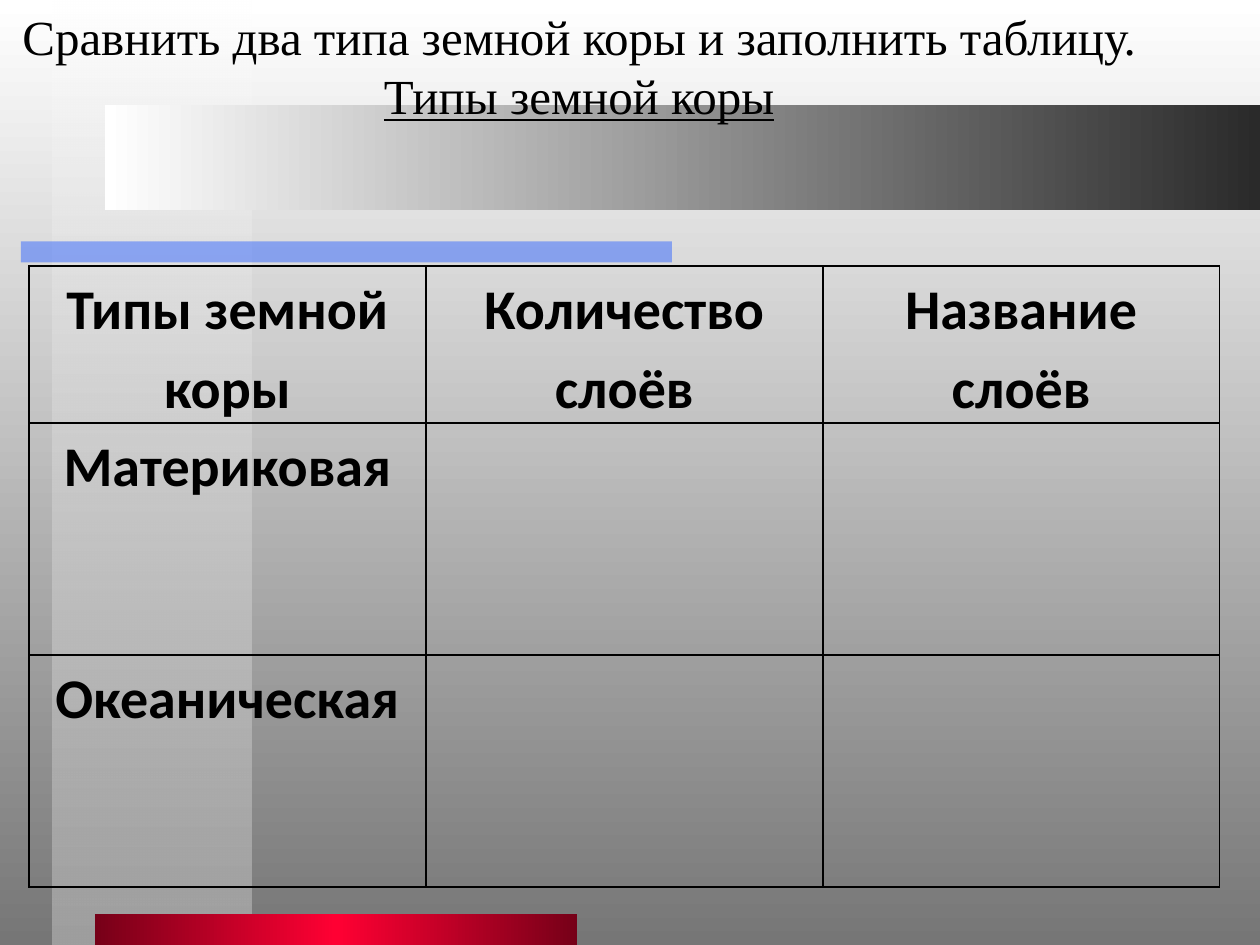
"""Build a slide with an empty comparison table of the two types of Earth's crust."""
from lxml.etree import SubElement
from pptx import Presentation
from pptx.dml.color import RGBColor
from pptx.enum.shapes import MSO_SHAPE
from pptx.enum.text import MSO_ANCHOR, MSO_AUTO_SIZE, PP_ALIGN
from pptx.oxml import parse_xml
from pptx.oxml.ns import nsdecls, qn
from pptx.util import Inches, Pt

COLORS = {
    "white": "FFFFFF", "gray": "767676", "silver": "9F9F9F", "charcoal": "2A2A2A",
    "blue": "3366FF", "red": "FF0033", "maroon": "760018", "ink": "000000",
}


def paint(fill, owner, stops, angle=0):
    fill.gradient()
    fill.gradient_angle = -angle % 360
    stop_list = owner.find(".//" + qn("a:gsLst"))
    for old_stop in list(stop_list):
        stop_list.remove(old_stop)
    for position, color, opacity in stops:
        stop = SubElement(stop_list, qn("a:gs"), pos=str(position * 1000))
        tint = SubElement(stop, qn("a:srgbClr"), val=COLORS[color])
        if opacity < 100:
            SubElement(tint, qn("a:alpha"), val=str(opacity * 1000))


def write(paragraph, text, *, font, size, bold=False, underline=False, spacing=None):
    paragraph.alignment = PP_ALIGN.CENTER
    paragraph.line_spacing = spacing
    run = paragraph.add_run()
    run.text = text
    run.font.name = font
    run.font.size = Pt(size)
    run.font.bold = bold
    run.font.underline = underline
    run.font.color.rgb = RGBColor.from_string(COLORS["ink"])


deck = Presentation()
deck.slide_width, deck.slide_height = Inches(10), Inches(7.5)
column, row = deck.slide_width / 24, deck.slide_height / 18
slide = deck.slides.add_slide(deck.slide_layouts[6])

backdrop = slide.background.fill
backdrop.gradient()
paint(backdrop, slide.element, [(0, "white", 100), (100, "gray", 100)], 90)

bands = [
    ((1, 0, 3.8, 18), [(0, "white", 50), (100, "silver", 100)], 90),
    ((0.4, 4.6, 12.4, 0.4), [(0, "blue", 50)], 0),
    ((1.8, 17.4, 9.2, 0.6), [(0, "maroon", 100), (50, "red", 100), (100, "maroon", 100)], 0),
    ((2, 2, 22, 2), [(0, "white", 100), (100, "charcoal", 100)], 0),
]
for (left, top, width, height), stops, angle in bands:
    band = slide.shapes.add_shape(
        MSO_SHAPE.RECTANGLE, int(left * column), int(top * row), int(width * column), int(height * row))
    band.shadow.inherit = False
    band.line.fill.background()
    if len(stops) > 1:
        paint(band.fill, band.element.spPr, stops, angle)
    else:
        _, color, opacity = stops[0]
        band.fill.solid()
        band.fill.fore_color.rgb = RGBColor.from_string(COLORS[color])
        tint = band.element.spPr.find(".//" + qn("a:srgbClr"))
        SubElement(tint, qn("a:alpha"), val=str(opacity * 1000))

crust_rows = [
    ["Типы земной коры", "Количество слоёв", "Название слоёв"],
    ["Материковая", "", ""],
    ["Океаническая", "", ""],
]
comparison = slide.shapes.add_table(
    3, 3, Inches(0.23), Inches(2.11), Inches(9.45), Inches(4.91)).table
comparison.first_row = comparison.horz_banding = False
for crust_column in comparison.columns:
    crust_column.width = Inches(3.15)
for crust_row, height in zip(comparison.rows, (1.23, 1.84, 1.84)):
    crust_row.height = Inches(height)

for crust_row, labels in zip(comparison.rows, crust_rows):
    for cell, label in zip(crust_row.cells, labels):
        cell.fill.background()
        cell.margin_left = cell.margin_right = Inches(0.07)
        cell.margin_top = cell.margin_bottom = 0
        if label:
            write(cell.text_frame.paragraphs[0], label,
                  font="Calibri", size=32, bold=True, spacing=1.15)
        for index, side in enumerate(("lnL", "lnR", "lnT", "lnB")):
            cell._tc.get_or_add_tcPr().insert(index, parse_xml(
                f'<a:{side} {nsdecls("a")} w="12700"><a:solidFill>'
                f'<a:srgbClr val="{COLORS["ink"]}"/></a:solidFill></a:{side}>'))

heading = slide.shapes.add_textbox(0, 0, Inches(9.19), int(2.5 * row)).text_frame
heading.word_wrap = False
heading.auto_size = MSO_AUTO_SIZE.SHAPE_TO_FIT_TEXT
heading.vertical_anchor = MSO_ANCHOR.MIDDLE
write(heading.paragraphs[0], "Сравнить два типа земной коры и заполнить таблицу.",
      font="Times New Roman", size=28)
write(heading.add_paragraph(), "Типы земной коры",
      font="Times New Roman", size=28, underline=True)

deck.save("out.pptx")
